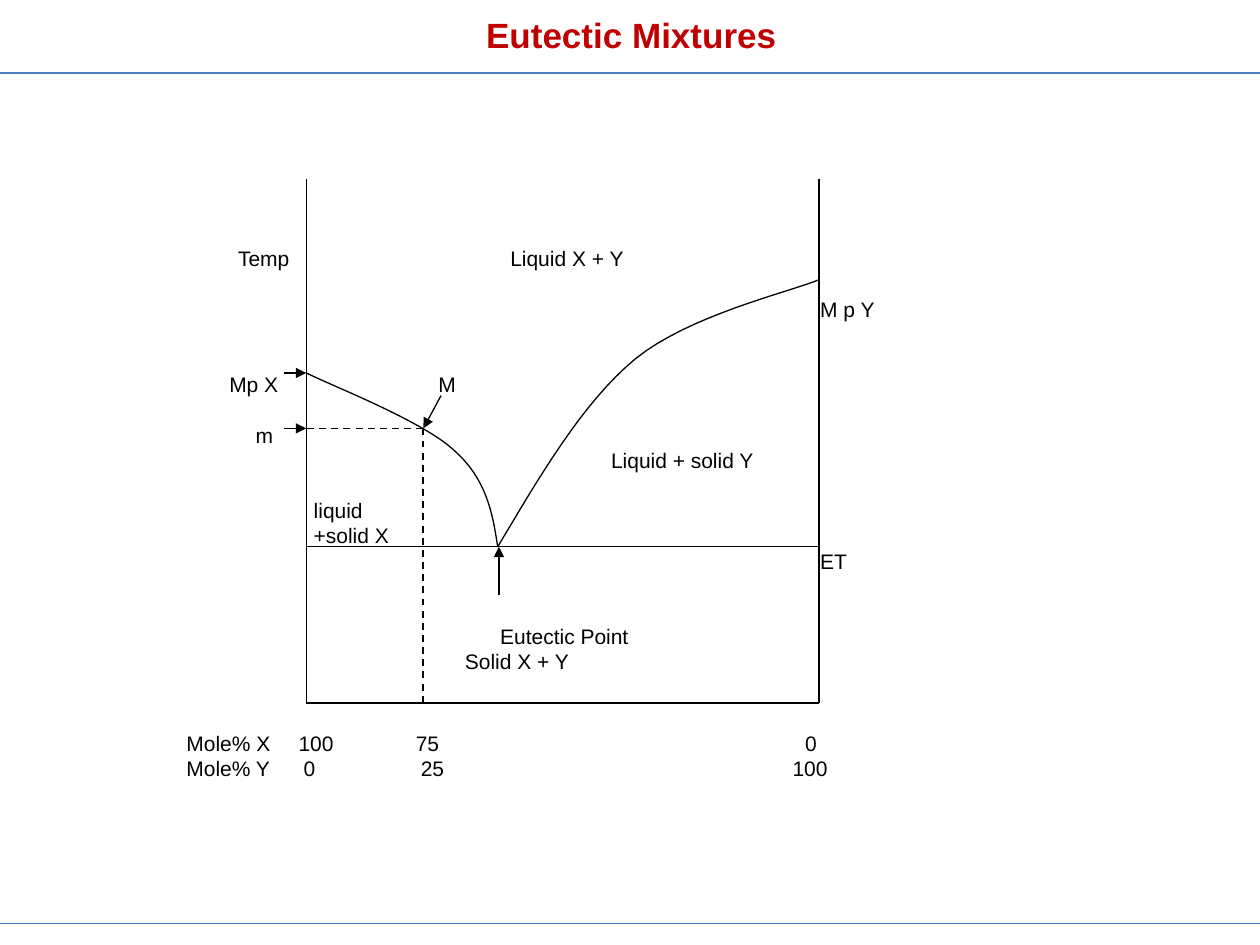
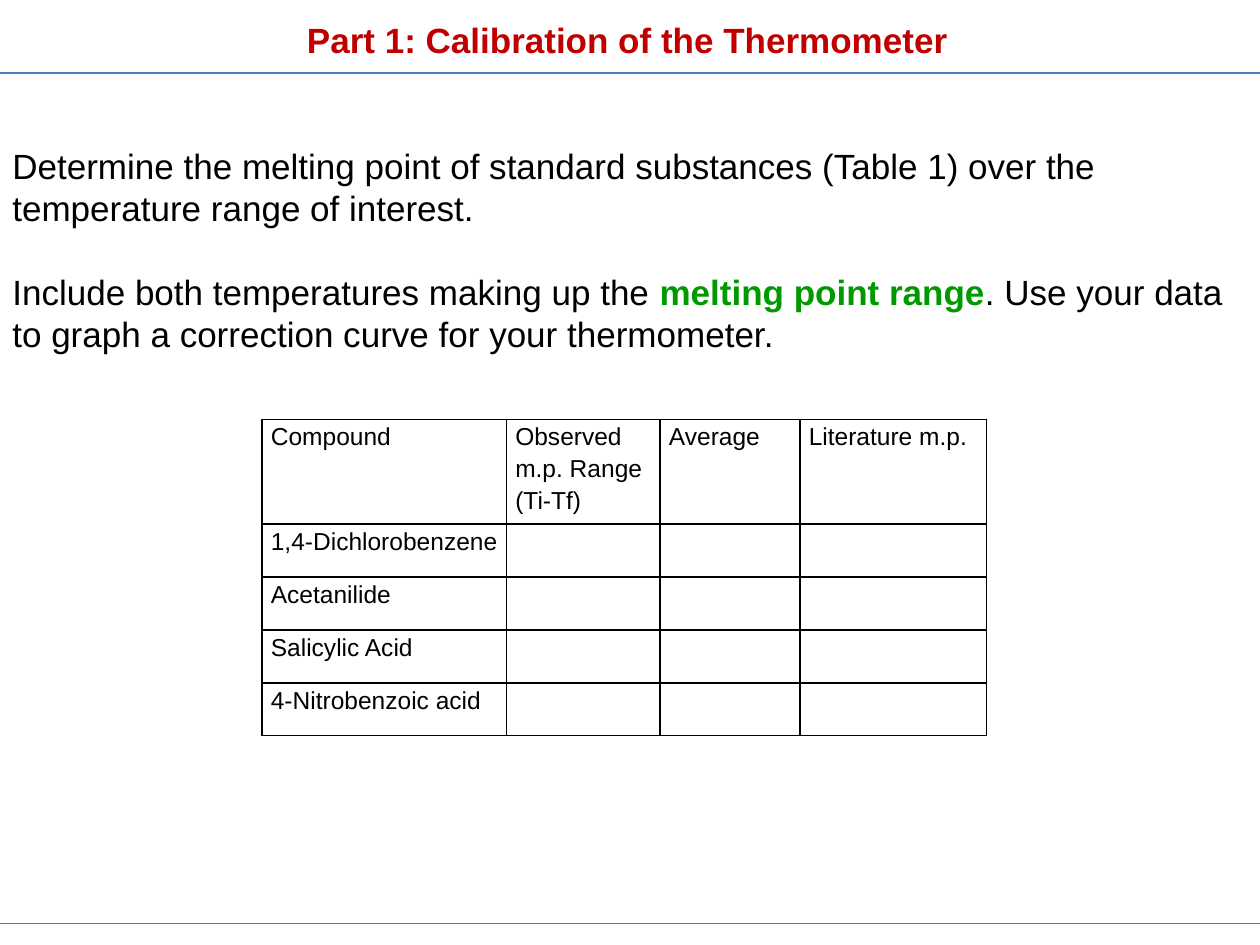
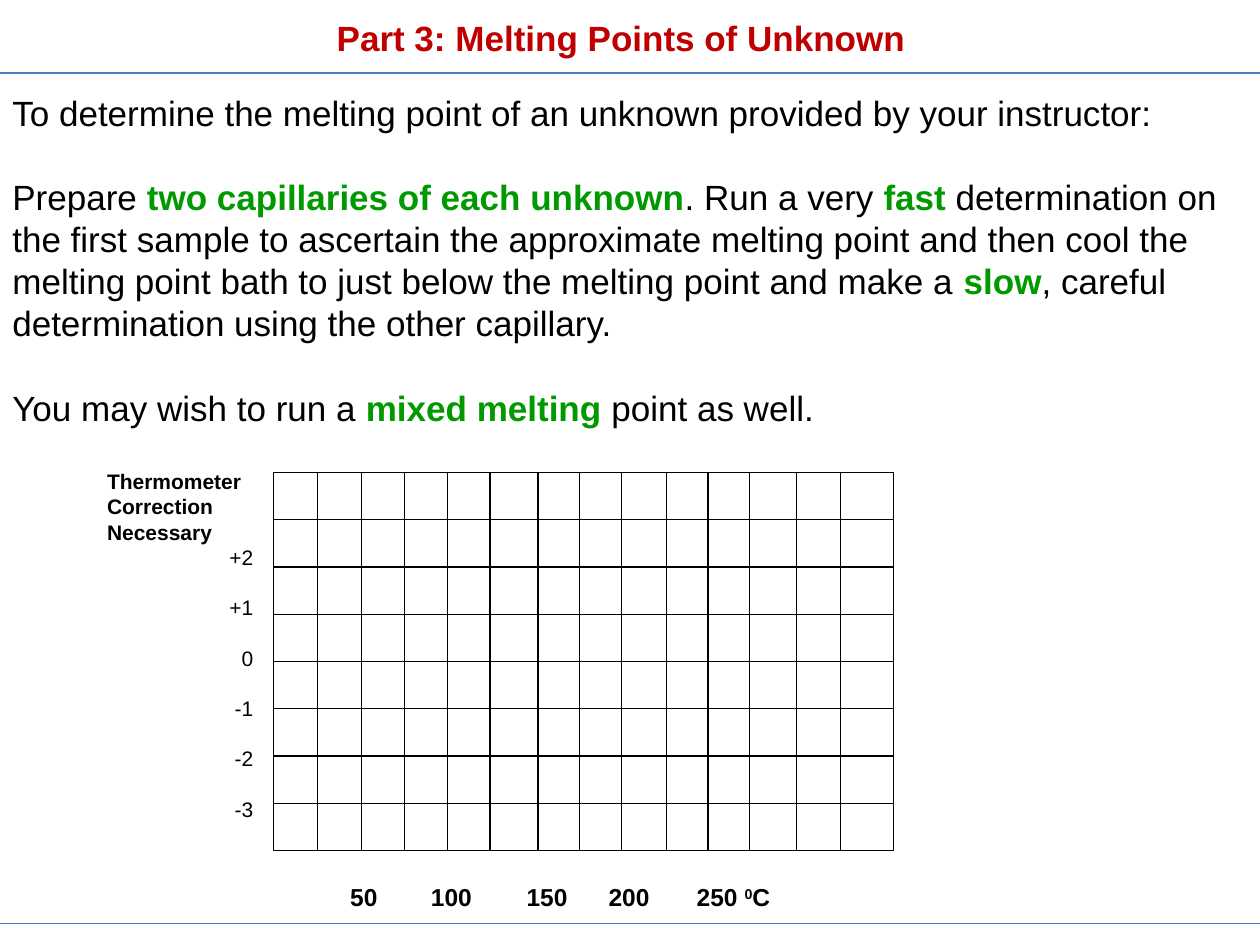
"""Build three slides on eutectic mixtures and melting points."""
from lxml.etree import SubElement as Sub
from pptx import Presentation
from pptx.dml.color import RGBColor
from pptx.enum.dml import MSO_LINE_DASH_STYLE as Dash
from pptx.enum.shapes import MSO_CONNECTOR as Conn, MSO_SHAPE as Shape
from pptx.enum.text import PP_ALIGN as Align
from pptx.oxml.ns import qn
from pptx.util import Inches, Pt

BLACK = RGBColor(0x00, 0x00, 0x00)
WHITE = RGBColor(0xFF, 0xFF, 0xFF)
RED = RGBColor(0xC0, 0x00, 0x00)
GREEN = RGBColor(0x00, 0x99, 0x00)
BLUE = RGBColor(0x4B, 0x7E, 0xBC)
FONT = "Arial"


def write(slide, box, paras, size=12, color=BLACK, bold=False,
          align=Align.LEFT, inset=0, wrap=False):
    """Add a text box; a run is (text, emphasised), a paragraph (gap, runs)."""
    frame = slide.shapes.add_textbox(*map(Inches, box)).text_frame
    frame.word_wrap = wrap
    frame.margin_left = frame.margin_right = Inches(inset)
    frame.margin_top = frame.margin_bottom = Inches(inset / 2)
    for i, (gap, runs) in enumerate(paras):
        para = frame.paragraphs[0] if i == 0 else frame.add_paragraph()
        para.alignment = align
        para.space_before = Pt(gap)
        for text, key in runs:
            run = para.add_run()
            run.text = text
            run.font.name = FONT
            run.font.size = Pt(size)
            run.font.bold = bold or key
            run.font.color.rgb = GREEN if key else color
    return frame


def draw(slide, ends, color=BLACK, width=0.75, dash=False, arrow=False):
    """Add a straight line from the first point to the second."""
    line = slide.shapes.add_connector(Conn.STRAIGHT, *map(Inches, ends))
    line.line.color.rgb = color
    line.line.width = Pt(width)
    if dash:
        line.line.dash_style = Dash.DASH
    if arrow:
        Sub(line.line._get_or_add_ln(), qn("a:tailEnd"), type="triangle")
    Sub(line._element.spPr, qn("a:effectLst"))


prs = Presentation()
prs.slide_width, prs.slide_height = Inches(10), Inches(7.5)

titles = [
    ("Eutectic Mixtures", (3.75, 0.06, 2.52, 0.44)),
    ("Part 1: Calibration of the Thermometer", (2.32, 0.1, 5.32, 0.44)),
    ("Part 3: Melting Points of Unknown", (2.51, 0.08, 4.84, 0.44)),
]
slides = []
for title, box in titles:
    slide = prs.slides.add_slide(prs.slide_layouts[6])
    write(slide, box, [(0, [(title, False)])], 20, RED, True, Align.CENTER, 0.1)
    for y in (0.58, 7.33):
        draw(slide, (0, y, 10, y), BLUE)
    slides.append(slide)
phase, calib, unknown = slides

LEFT, RIGHT, TOP, BASE, MELT = 2.43, 6.5, 1.42, 5.58, 4.34
for ends in [(LEFT, TOP, LEFT, BASE), (RIGHT, TOP, RIGHT, BASE),
             (RIGHT, BASE, LEFT, BASE), (LEFT, MELT, RIGHT, MELT)]:
    draw(phase, ends)
for ends in [(3.36, 3.4, 3.36, BASE), (3.36, 3.4, LEFT, 3.4)]:
    draw(phase, ends, width=1, dash=True)
for ends in [(3.5, 3.14, 3.36, 3.4), (2.25, 2.96, LEFT, 2.96),
             (2.25, 3.4, LEFT, 3.4), (3.96, 4.72, 3.96, MELT)]:
    draw(phase, ends, arrow=True)

curves = [
    [(3.95, 4.34), (4.29, 3.77), (4.62, 3.2), (5.04, 2.85),
     (5.47, 2.5), (6.26, 2.32), (6.5, 2.22)],
    [(3.95, 4.34), (3.91, 4.07), (3.86, 3.8), (3.6, 3.57),
     (3.35, 3.34), (2.63, 3.06), (2.43, 2.96)],
]
STEPS = 16
for knots in curves:
    dots = []
    for start in (0, 3):
        a, b, c, d = knots[start:start + 4]
        for step in range(1, STEPS + 1):
            t = step / STEPS
            u = 1 - t
            dots.append([Inches(u**3 * p + 3 * u * u * t * q + 3 * u * t * t * r + t**3 * s)
                         for p, q, r, s in zip(a, b, c, d)])
    pen = phase.shapes.build_freeform(*map(Inches, knots[0]))
    pen.add_line_segments(dots, close=False)
    curve = pen.convert_to_shape()
    curve.fill.background()
    curve.line.color.rgb = BLACK
    curve.line.width = Pt(0.75)
    curve.shadow.inherit = False

ROW = 0.2
labels = [
    ("Temp", 1.89, 0), ("Liquid X + Y", 4.05, 0), ("M p Y", 6.51, 2),
    ("Mp X", 1.82, 5), ("M", 3.48, 5), ("m", 2.03, 7),
    ("Liquid + solid Y", 4.85, 8), ("liquid", 2.49, 10), ("+solid X", 2.49, 11),
    ("ET", 6.51, 12), ("Eutectic Point", 3.97, 15), ("Solid X + Y", 3.69, 16),
]
for text, x, row in labels:
    write(phase, (x, 1.95 + ROW * row, 1.2, ROW), [(0, [(text, False)])])
moles = [
    [("Mole% X", 1.48), ("100", 2.37), ("75", 3.3), ("0", 6.39)],
    [("Mole% Y", 1.48), ("0", 2.41), ("25", 3.34), ("100", 6.29)],
]
for row, cells in enumerate(moles):
    for text, x in cells:
        write(phase, (x, 5.8 + ROW * row, 0.7, ROW), [(0, [(text, False)])])

write(calib, (0, 1.1, 10, 2.09), [
    (0, [("Determine the melting point of standard substances (Table 1) over the", False)]),
    (0, [("temperature range of interest.", False)]),
    (24, [("Include both temperatures making up the ", False),
          ("melting point range", True),
          (". Use your data to graph a correction curve for your thermometer.", False)]),
], 20, inset=0.1, wrap=True)

heads = ["Compound", "Observed m.p. Range (Ti-Tf)", "Average", "Literature m.p."]
names = ["1,4-Dichlorobenzene", "Acetanilide", "Salicylic Acid", "4-Nitrobenzoic acid"]
rows = [heads] + [[name, "", "", ""] for name in names]
table = calib.shapes.add_table(
    5, 4, Inches(2.08), Inches(3.33), Inches(5.75), Inches(2.5)).table
table.first_row = table.horz_banding = False
for col, width in zip(table.columns, (1.94, 1.22, 1.11, 1.48)):
    col.width = Inches(width)
for i, texts in enumerate(rows):
    table.rows[i].height = Inches(0.42 if i else 0.83)
    for j, text in enumerate(texts):
        cell = table.cell(i, j)
        cell.margin_left = cell.margin_right = Inches(0.07)
        cell.margin_top = cell.margin_bottom = 0
        for side in ("lnL", "lnR", "lnT", "lnB"):
            edge = Sub(cell._tc.get_or_add_tcPr(), qn("a:" + side), w=str(Pt(1)))
            Sub(Sub(edge, qn("a:solidFill")), qn("a:srgbClr"), val=str(BLACK))
        cell.fill.background()
        if text:
            para = cell.text_frame.paragraphs[0]
            para.line_spacing = 1.15
            run = para.add_run()
            run.text = text
            run.font.name = FONT
            run.font.size = Pt(14)
            run.font.color.rgb = BLACK

write(unknown, (0, 0.68, 10, 2.79), [
    (0, [("To determine the melting point of an unknown provided by your instructor:", False)]),
    (24, [("Prepare ", False), ("two capillaries of each unknown", True),
          (". Run a very ", False), ("fast", True),
          (" determination on the first sample to ascertain the approximate melting "
           "point and then cool the melting point bath to just below the melting "
           "point and make a ", False), ("slow", True),
          (", careful determination using the other capillary.", False)]),
    (24, [("You may wish to run a ", False), ("mixed melting ", True),
          ("point as well.", False)]),
], 20, inset=0.1, wrap=True)

BAND = 0.375
for i in range(8):
    band = unknown.shapes.add_shape(
        Shape.RECTANGLE, Inches(2.17), Inches(3.75 + BAND * i), Inches(4.92), Inches(BAND))
    band.fill.solid()
    band.fill.fore_color.rgb = WHITE
    band.line.color.rgb = BLACK
    band.line.width = Pt(0.75)
    band.shadow.inherit = False
for x in (2.52, 2.87, 3.21, 3.55, 3.89, 4.27, 4.6, 4.93, 5.29, 5.62, 5.95, 6.32, 6.67):
    draw(unknown, (x, 3.75, x, 6.75))

write(unknown, (0.85, 3.72, 1.2, 0.6),
      [(0, [(word, False)]) for word in ("Thermometer", "Correction", "Necessary")], bold=True)
for i, mark in enumerate(("+2", "+1", "0", "-1", "-2", "-3")):
    write(unknown, (1.5, 4.32 + 0.4 * i, 0.51, 0.2), [(0, [(mark, False)])], align=Align.RIGHT)
for mark, x in (("50", 2.78), ("100", 3.42), ("150", 4.18), ("200", 4.83)):
    write(unknown, (x, 7, 0.4, 0.24), [(0, [(mark, False)])], 14, bold=True)
frame = write(unknown, (5.53, 7, 0.7, 0.24),
              [(0, [("250 ", False), ("0", False), ("C", False)])], 14, bold=True)
frame.paragraphs[0].runs[1].font._element.set("baseline", "30000")

prs.save("out.pptx")
